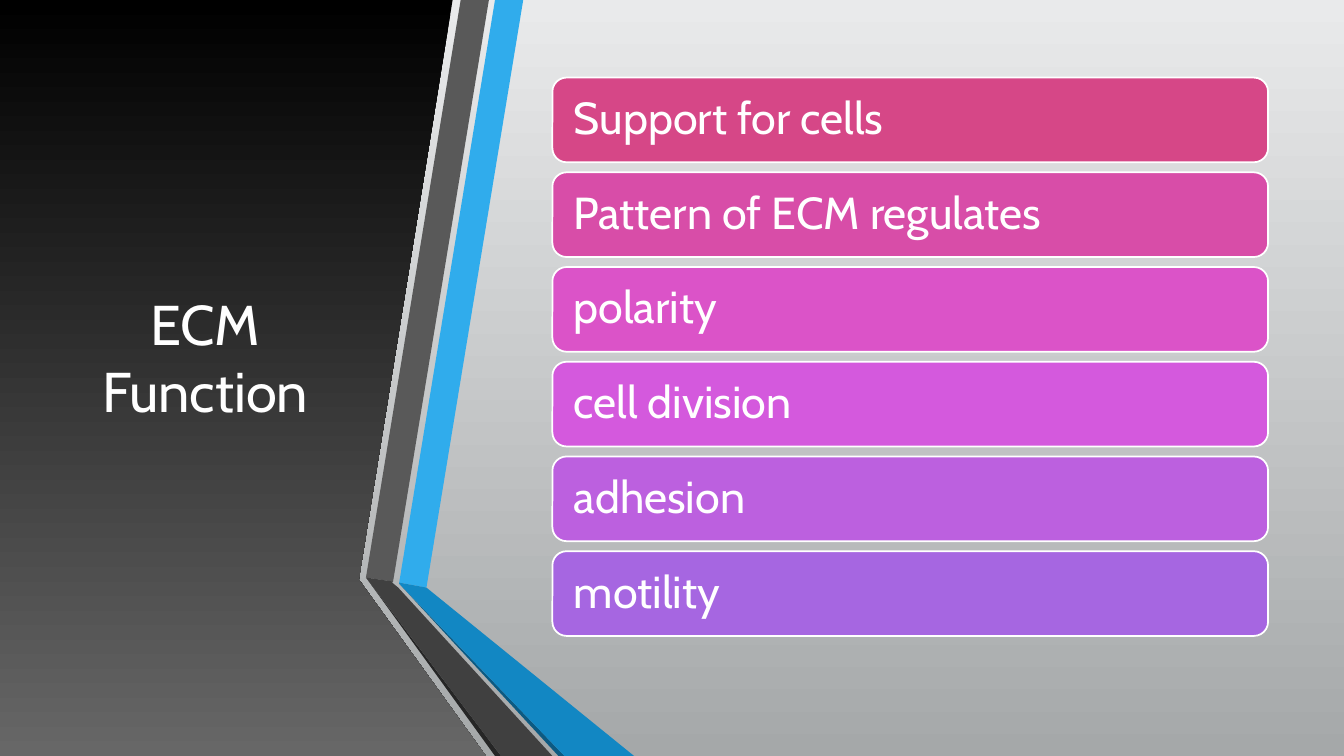
from dataclasses import dataclass

import pptx
import pptx.dml.color
import pptx.dml.fill
import pptx.enum.shapes
import pptx.enum.text
import pptx.shapes.autoshape
import pptx.slide
import pptx.text.text
import pptx.util

RGBColor = pptx.dml.color.RGBColor
Point = tuple[float, float]

FONT = "Cabin"
WHITE = RGBColor(0xFF, 0xFF, 0xFF)
BLACK = RGBColor(0x00, 0x00, 0x00)
PANEL_GRAY = RGBColor(0x67, 0x67, 0x67)
PALE_GRAY = RGBColor(0xE9, 0xEA, 0xEB)
MID_GRAY = RGBColor(0xA5, 0xA8, 0xA9)
BLUE = RGBColor(0x30, 0xAC, 0xEC)
DEEP_BLUE = RGBColor(0x12, 0x87, 0xC3)
BLUE_SHADE = RGBColor(0x0C, 0x5A, 0x82)
GRAY = RGBColor(0x59, 0x59, 0x59)
DARK_GRAY = RGBColor(0x40, 0x40, 0x40)
GRAY_SHADE = RGBColor(0x26, 0x26, 0x26)

# The slide is a grid of 100 columns by 100 rows.
SLIDE_W = pptx.util.Inches(13.33)
SLIDE_H = pptx.util.Inches(7.5)

BAR_LEFT, BAR_TOP = 41.1, 10.27
BAR_W, BAR_H = 53.25, 11.2
BAR_PITCH = 12.53
BAR_INSET = 1.28


@dataclass(frozen=True)
class Facet:
    """One flat face of the folded ribbon, its corners in columns and rows."""
    color: RGBColor
    corners: list[Point]


@dataclass(frozen=True)
class Bar:
    text: str
    color: RGBColor


PANEL = [(0, 0), (33.68, 0), (26.7, 76.67), (36.15, 100), (0, 100)]

FACETS = [
    Facet(BLUE, [(29.7, 77.07), (31.73, 77.73), (38.93, 0), (36.83, 0)]),
    Facet(GRAY, [(36.38, 0), (34.28, 0), (27.23, 76.4), (29.25, 76.93)]),
    Facet(GRAY_SHADE, [(27.23, 76.4), (36.83, 100), (37.28, 100)]),
    Facet(BLUE_SHADE, [(29.7, 77.2), (41.55, 100), (42, 100)]),
    Facet(DEEP_BLUE, [(29.7, 77.2), (42, 100), (47.18, 100), (31.73, 77.73),
                      (29.7, 77.07)]),
    Facet(DARK_GRAY, [(41.1, 100), (29.63, 77.73), (29.18, 77.07),
                      (29.25, 76.93), (27.23, 76.4), (37.28, 100)]),
]

BARS = [
    Bar("Support for cells", RGBColor(0xD6, 0x47, 0x87)),
    Bar("Pattern of ECM regulates", RGBColor(0xD8, 0x4D, 0xA8)),
    Bar("polarity", RGBColor(0xDB, 0x53, 0xC8)),
    Bar("cell division", RGBColor(0xD4, 0x59, 0xDD)),
    Bar("adhesion", RGBColor(0xBC, 0x60, 0xDF)),
    Bar("motility", RGBColor(0xA6, 0x66, 0xE1)),
]


def col(n: float) -> pptx.util.Emu:
    return pptx.util.Emu(round(SLIDE_W * n / 100))


def row(n: float) -> pptx.util.Emu:
    return pptx.util.Emu(round(SLIDE_H * n / 100))


def fill_downward(fill: pptx.dml.fill.FillFormat, top: RGBColor,
                  bottom: RGBColor) -> None:
    """Fill with a vertical gradient running from top to bottom."""
    fill.gradient()
    fill.gradient_angle = 270
    for stop, color in zip(fill.gradient_stops, (top, bottom)):
        stop.color.rgb = color


def format_text(p: pptx.text.text._Paragraph, size: float) -> None:
    for r in p.runs:
        r.font.name = FONT
        r.font.size = pptx.util.Pt(size)
        r.font.color.rgb = WHITE


def add_polygon(s: pptx.slide.Slide,
                corners: list[Point]) -> pptx.shapes.autoshape.Shape:
    points = [(col(x), row(y)) for x, y in corners]
    builder = s.shapes.build_freeform(*points[0])
    builder.add_line_segments(points[1:], close=True)
    sp = builder.convert_to_shape()
    sp.shadow.inherit = False
    sp.line.fill.background()
    return sp


def add_facet(s: pptx.slide.Slide, facet: Facet) -> None:
    sp = add_polygon(s, facet.corners)
    sp.fill.solid()
    sp.fill.fore_color.rgb = facet.color


def add_bar(s: pptx.slide.Slide, bar: Bar, index: int) -> None:
    sp = s.shapes.add_shape(
        pptx.enum.shapes.MSO_SHAPE.ROUNDED_RECTANGLE,
        col(BAR_LEFT), row(BAR_TOP + index * BAR_PITCH), col(BAR_W), row(BAR_H))
    sp.shadow.inherit = False
    sp.fill.solid()
    sp.fill.fore_color.rgb = bar.color
    sp.line.color.rgb = WHITE
    sp.line.width = pptx.util.Pt(1.25)
    tf = sp.text_frame
    tf.word_wrap = True
    tf.vertical_anchor = pptx.enum.text.MSO_ANCHOR.MIDDLE
    tf.margin_left = tf.margin_right = col(BAR_INSET)
    tf.text = bar.text
    p = tf.paragraphs[0]
    p.alignment = pptx.enum.text.PP_ALIGN.LEFT
    p.line_spacing = 0.9
    format_text(p, 32)


def place_title(s: pptx.slide.Slide, text: str) -> None:
    """Set the title and raise it above the shapes drawn so far."""
    title = s.shapes.title
    title.left, title.top = col(4.43), row(10)
    title.width, title.height = col(21.68), row(74.4)
    tf = title.text_frame
    tf.text = text
    tf.word_wrap = True
    tf.vertical_anchor = pptx.enum.text.MSO_ANCHOR.MIDDLE
    p = tf.paragraphs[0]
    p.alignment = pptx.enum.text.PP_ALIGN.CENTER
    format_text(p, 40)
    title._element.getparent().append(title._element)


def main() -> None:
    prs = pptx.Presentation()
    prs.slide_width, prs.slide_height = SLIDE_W, SLIDE_H
    s = prs.slides.add_slide(prs.slide_layouts.get_by_name("Title Only"))
    fill_downward(s.background.fill, PALE_GRAY, MID_GRAY)
    panel = add_polygon(s, PANEL)
    fill_downward(panel.fill, BLACK, PANEL_GRAY)
    place_title(s, "ECM Function")
    for facet in FACETS:
        add_facet(s, facet)
    for index, bar in enumerate(BARS):
        add_bar(s, bar, index)
    prs.save("out.pptx")


if __name__ == "__main__":
    main()
